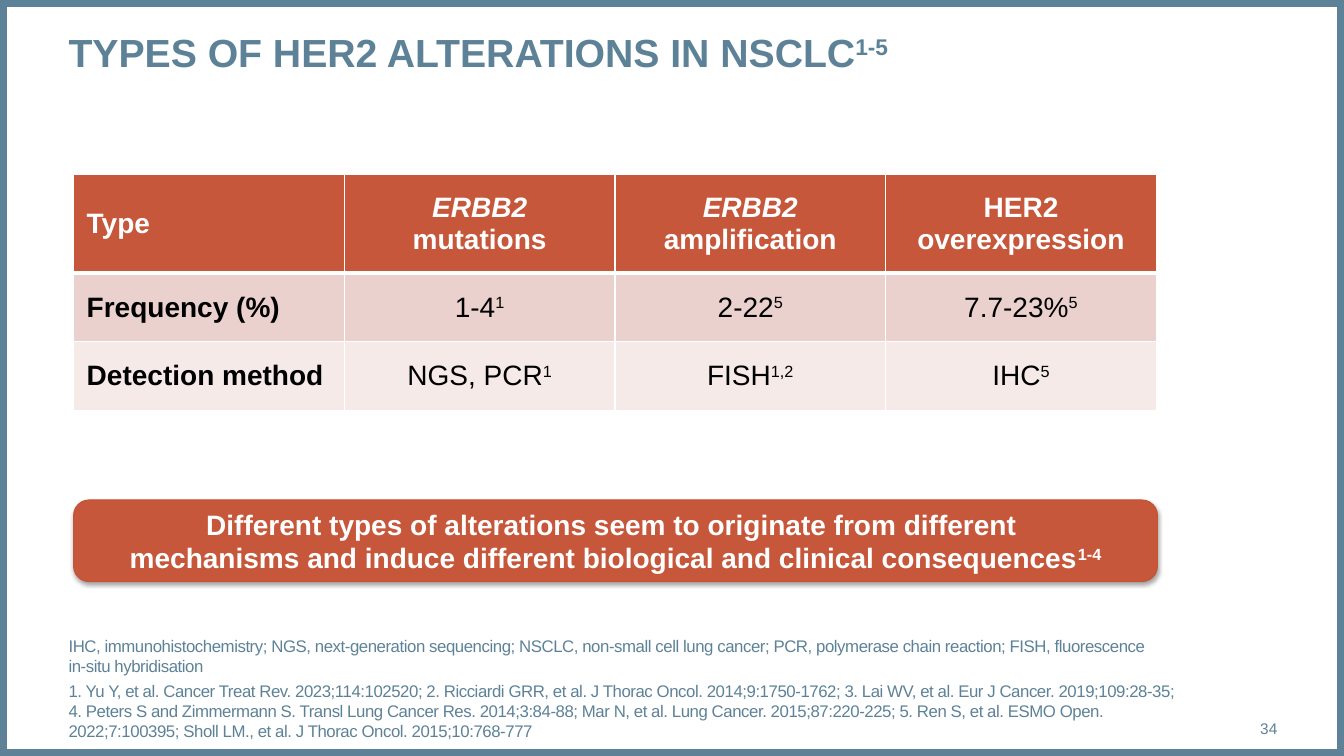
from copy import deepcopy
from dataclasses import dataclass

from lxml import etree
from pptx import Presentation
from pptx.dml.color import RGBColor
from pptx.enum.shapes import MSO_SHAPE
from pptx.enum.text import MSO_ANCHOR, MSO_AUTO_SIZE, PP_ALIGN
from pptx.oxml.ns import qn
from pptx.util import Inches, Pt

LEFT, CENTER, RIGHT = PP_ALIGN.LEFT, PP_ALIGN.CENTER, PP_ALIGN.RIGHT
TOP, MIDDLE, BOTTOM = MSO_ANCHOR.TOP, MSO_ANCHOR.MIDDLE, MSO_ANCHOR.BOTTOM


@dataclass(frozen=True)
class Theme:
    font: str = "Arial"
    blue: str = "5D8298"
    rust: str = "C6573B"
    rust_line: str = "C55336"
    white: str = "FFFFFF"
    black: str = "000000"
    row_fills: tuple = ("C6573B", "EAD1CE", "F5EAE8")
    title: int = 28
    text: int = 20
    notes: int = 12
    number: int = 11


THEME = Theme()


def add_runs(paragraph, parts, size, color, bold=False, align=LEFT):
    """Add (text, style) parts; style is "", "sup" or "italic", and a newline breaks the line."""
    paragraph.alignment = align
    for text, style in parts:
        for index, line in enumerate(text.split("\n")):
            if index:
                paragraph.add_line_break()
                paragraph._p[-1].append(deepcopy(run._r.rPr))
            if not line:
                continue
            run = paragraph.add_run()
            run.text = line
            run.font.name = THEME.font
            run.font.size = Pt(size)
            run.font.bold = bold
            run.font.italic = style == "italic"
            run.font.color.rgb = RGBColor.from_string(color)
            if style == "sup":
                run.font._element.set("baseline", "30000")


def set_frame(shape, box, anchor):
    """Place a shape and give its text frame no margins."""
    shape.left, shape.top, shape.width, shape.height = [Inches(value) for value in box]
    frame = shape.text_frame
    frame.margin_left = frame.margin_top = frame.margin_right = frame.margin_bottom = 0
    frame.word_wrap = True
    frame.auto_size = MSO_AUTO_SIZE.NONE
    frame.vertical_anchor = anchor
    return frame


presentation = Presentation()
presentation.slide_width = Inches(13.33)
presentation.slide_height = Inches(7.5)
slide = presentation.slides.add_slide(presentation.slide_layouts[1])

# Border around the slide
border = slide.shapes.add_shape(
    MSO_SHAPE.RECTANGLE, 0, 0, presentation.slide_width, presentation.slide_height)
border.shadow.inherit = False
border.fill.background()
border.line.color.rgb = RGBColor.from_string(THEME.blue)
border.line.width = Pt(10)

# Title and slide number
title_frame = set_frame(slide.shapes.title, (0.68, 0.28, 11.99, 0.94), TOP)
add_runs(title_frame.paragraphs[0],
         [("TYPES OF HER2 ALTERATIONS IN NSCLC", ""), ("1-5", "sup")],
         THEME.title, THEME.blue, bold=True)

number_box = slide.shapes.add_textbox(0, 0, 0, 0)
number_frame = set_frame(number_box, (11.81, 7.03, 0.86, 0.4), MIDDLE)
add_runs(number_frame.paragraphs[0], [("34", "")], THEME.number, THEME.blue, align=RIGHT)

# Abbreviations and references
NOTES = [
    "IHC, immunohistochemistry; NGS, next-generation sequencing; NSCLC, non-small cell lung "
    "cancer; PCR, polymerase chain reaction; FISH, fluorescence in‑situ hybridisation",
    "1. Yu Y, et al. Cancer Treat Rev. 2023;114:102520; 2. Ricciardi GRR, et al. J Thorac Oncol. "
    "2014;9:1750-1762; 3. Lai WV, et al. Eur J Cancer. 2019;109:28-35; \n"
    "4. Peters S and Zimmermann S. Transl Lung Cancer Res. 2014;3:84-88; Mar N, et al. Lung "
    "Cancer. 2015;87:220-225; 5. Ren S, et al. ESMO Open. 2022;7:100395; Sholl LM., et al. "
    "J Thorac Oncol. 2015;10:768-777",
]
notes_frame = set_frame(slide.placeholders[1], (0.68, 6.95, 11.13, 0.4), BOTTOM)
for index, note in enumerate(NOTES):
    paragraph = notes_frame.add_paragraph() if index else notes_frame.paragraphs[0]
    properties = paragraph._p.get_or_add_pPr()
    properties.set("marL", "0")
    properties.set("indent", "0")
    etree.SubElement(properties, qn("a:buNone"))
    paragraph.space_before = Pt(3 if index else 0)
    add_runs(paragraph, [(note, "")], THEME.notes, THEME.blue)
    for run_properties in paragraph._p.iter(qn("a:rPr")):
        run_properties.set("spc", "-30")

# Table of alteration types
ROWS = [
    [[("Type", "")],
     [("ERBB2\n", "italic"), ("mutations", "")],
     [("ERBB2 ", "italic"), ("amplification", "")],
     [("HER2 overexpression", "")]],
    [[("Frequency (%)", "")],
     [("1-4", ""), ("1", "sup")],
     [("2-22", ""), ("5", "sup")],
     [("7.7-23%", ""), ("5", "sup")]],
    [[("Detection method", "")],
     [("NGS, PCR", ""), ("1", "sup")],
     [("FISH", ""), ("1,2", "sup")],
     [("IHC", ""), ("5", "sup")]],
]
ROW_HEIGHTS = [0.98, 0.68, 0.68]
table = slide.shapes.add_table(len(ROWS), len(ROWS[0]), Inches(0.73), Inches(1.73),
                               Inches(10.74), Inches(sum(ROW_HEIGHTS))).table
for row_index, row in enumerate(ROWS):
    table.rows[row_index].height = Inches(ROW_HEIGHTS[row_index])
    is_header = row_index == 0
    for column_index, parts in enumerate(row):
        cell = table.cell(row_index, column_index)
        cell.margin_left = cell.margin_right = Inches(0.13)
        cell.margin_top = cell.margin_bottom = Inches(0.18)
        cell.vertical_anchor = MIDDLE
        cell_properties = cell._tc.get_or_add_tcPr()
        for side in ("lnL", "lnR", "lnT", "lnB"):
            is_thick = (side == "lnB" and is_header) or (side == "lnT" and row_index == 1)
            edge = etree.SubElement(cell_properties, qn(f"a:{side}"), w=str(Pt(3 if is_thick else 1)))
            edge_fill = etree.SubElement(edge, qn("a:solidFill"))
            etree.SubElement(edge_fill, qn("a:srgbClr"), val=THEME.white)
        cell.fill.solid()
        cell.fill.fore_color.rgb = RGBColor.from_string(THEME.row_fills[row_index])
        add_runs(cell.text_frame.paragraphs[0], parts, THEME.text,
                 THEME.white if is_header else THEME.black,
                 bold=is_header or column_index == 0,
                 align=CENTER if column_index else LEFT)

# Key message
message = slide.shapes.add_shape(MSO_SHAPE.ROUNDED_RECTANGLE, Inches(0.73), Inches(4.96),
                                 Inches(10.75), Inches(0.81))
message.adjustments[0] = 0.19
message.fill.solid()
message.fill.fore_color.rgb = RGBColor.from_string(THEME.rust)
message.line.color.rgb = RGBColor.from_string(THEME.rust_line)
message.line.width = Pt(0.75)
message.shadow.inherit = False
effects = message._element.spPr.find(qn("a:effectLst"))
shadow = etree.SubElement(effects, qn("a:outerShdw"), blurRad=str(Pt(3.1)), dist=str(Pt(1.8)),
                          dir="5400000", rotWithShape="0")
shadow_color = etree.SubElement(shadow, qn("a:srgbClr"), val=THEME.black)
etree.SubElement(shadow_color, qn("a:alpha"), val="35000")
message.text_frame.word_wrap = True
message.text_frame.vertical_anchor = MIDDLE
add_runs(message.text_frame.paragraphs[0],
         [("Different types of alterations seem to originate from different \n"
           "mechanisms and induce different biological and clinical consequences", ""),
          ("1-4", "sup")],
         THEME.text, THEME.white, bold=True, align=CENTER)

presentation.save("out.pptx")
